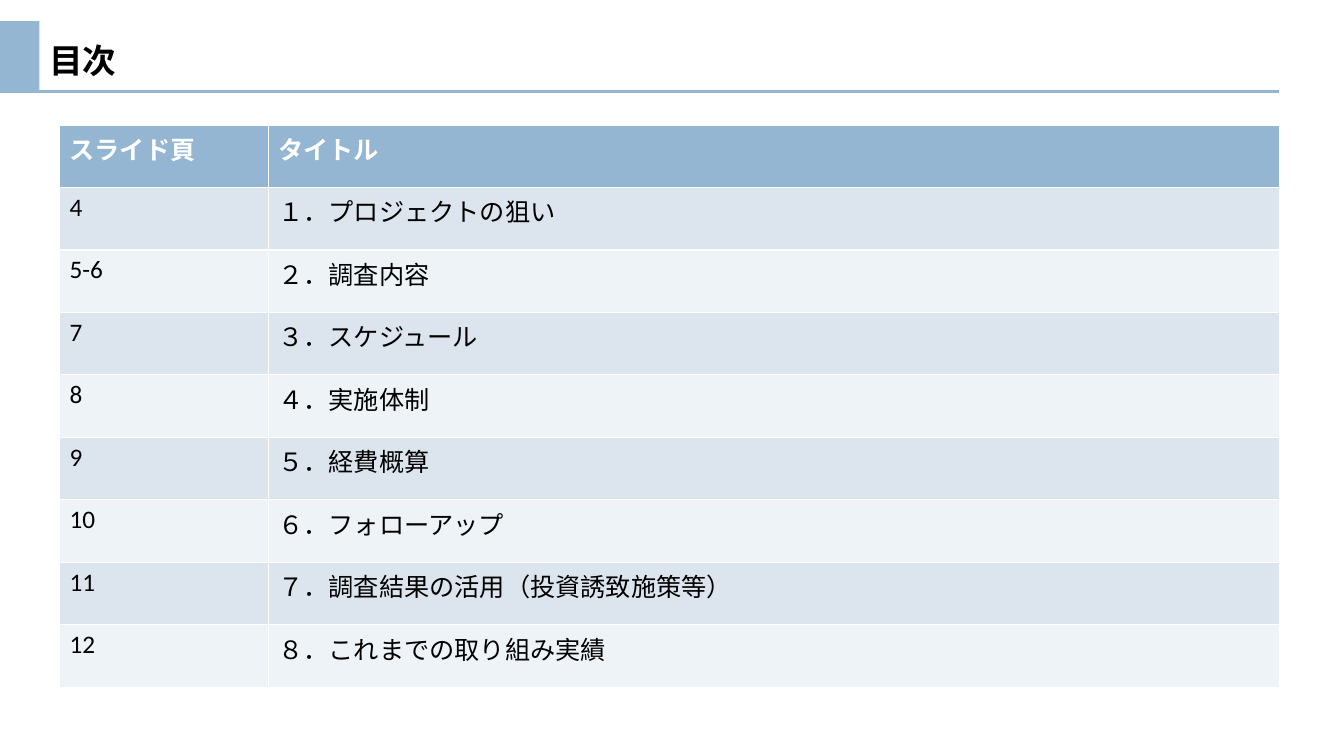
from pptx import Presentation
from pptx.dml.color import RGBColor
from pptx.enum.shapes import MSO_CONNECTOR, MSO_SHAPE
from pptx.enum.text import MSO_ANCHOR
from pptx.oxml.ns import qn
from pptx.util import Pt
from lxml import etree

PX = 9144  # 100 px to the inch
BLUE = RGBColor(0x94, 0xB6, 0xD2)
BAND_DARK = RGBColor(0xDC, 0xE5, 0xEE)
BAND_LIGHT = RGBColor(0xEE, 0xF3, 0xF7)
WHITE = RGBColor(0xFF, 0xFF, 0xFF)
BLACK = RGBColor(0x00, 0x00, 0x00)


def px(*lengths):
    return [length * PX for length in lengths]


def write(text_frame, text, size=18, color=BLACK, bold=False):
    paragraph = text_frame.paragraphs[0]
    run = paragraph.add_run()
    run.text = text
    run.font.name = "Calibri"
    run.font.size = Pt(size)
    run.font.bold = bold
    run.font.color.rgb = color


presentation = Presentation()
presentation.slide_width, presentation.slide_height = px(1333, 750)
slide = presentation.slides.add_slide(presentation.slide_layouts[6])

# Table of contents
contents = [
    ("スライド頁", "タイトル"),
    ("4", "１．プロジェクトの狙い"),
    ("5-6", "２．調査内容"),
    ("7", "３．スケジュール"),
    ("8", "４．実施体制"),
    ("9", "５．経費概算"),
    ("10", "６．フォローアップ"),
    ("11", "７．調査結果の活用（投資誘致施策等）"),
    ("12", "８．これまでの取り組み実績"),
]
row_height = 62
table = slide.shapes.add_table(
    len(contents), 2, *px(59, 124, 1210, row_height * len(contents))
).table
for column, width in zip(table.columns, px(207, 1003)):
    column.width = width
for row_index, entry in enumerate(contents):
    is_header = row_index == 0
    band = BLUE if is_header else BAND_DARK if row_index % 2 else BAND_LIGHT
    for column_index, text in enumerate(entry):
        cell = table.cell(row_index, column_index)
        cell.fill.solid()
        cell.fill.fore_color.rgb = band
        write(cell.text_frame, text, color=WHITE if is_header else BLACK, bold=is_header)

# Title block
marker = slide.shapes.add_shape(MSO_SHAPE.RECTANGLE, *px(0, 21, 39, 71))
marker.shadow.inherit = False
marker.fill.solid()
marker.fill.fore_color.rgb = BLUE
marker.line.fill.background()

title = slide.shapes.add_textbox(*px(39, 24, 915, 71))
title.text_frame.word_wrap = True
title.text_frame.vertical_anchor = MSO_ANCHOR.MIDDLE
write(title.text_frame, "目次", size=24, bold=True)

# Rule under the title
rule = slide.shapes.add_connector(MSO_CONNECTOR.STRAIGHT, *px(0, 91, 1269, 91))
rule.line.color.rgb = BLUE
rule.line.width = Pt(2)
etree.SubElement(rule._element.spPr, qn("a:effectLst"))

presentation.save("out.pptx")
